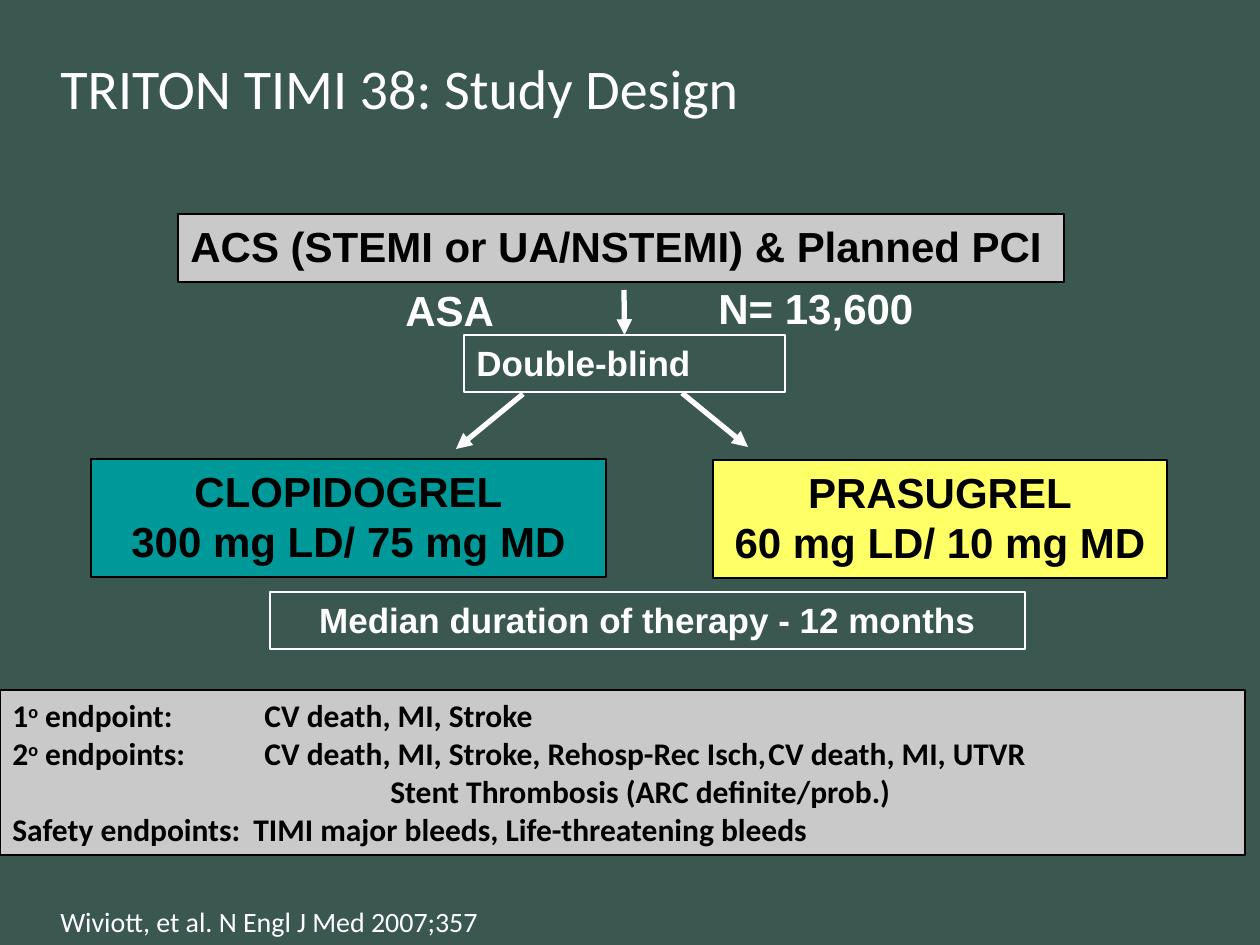
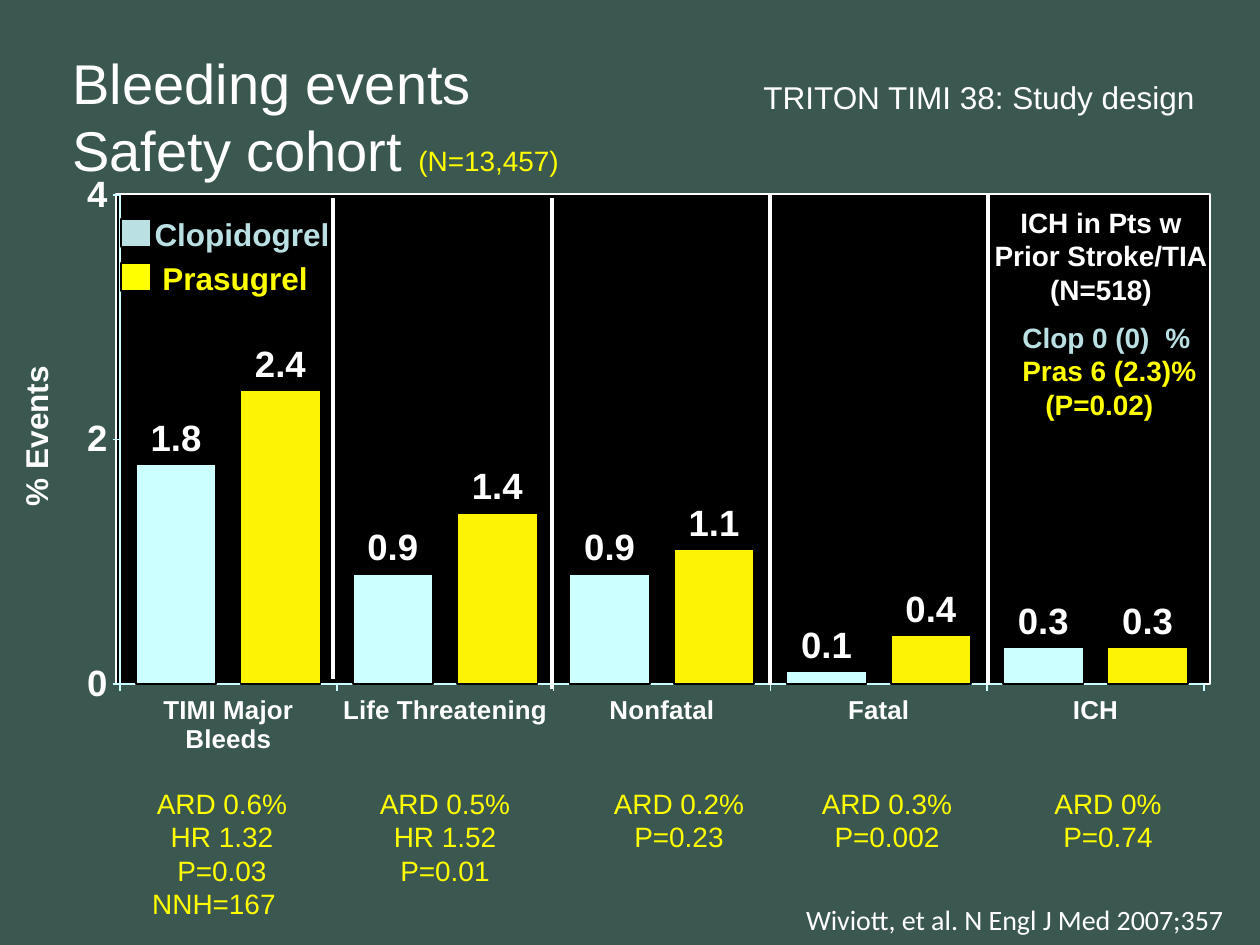
from dataclasses import dataclass

from lxml import etree
from pptx import Presentation
from pptx.chart.data import CategoryChartData
from pptx.dml.color import RGBColor
from pptx.enum import chart as charts
from pptx.enum import shapes, text
from pptx.oxml import parse_xml
from pptx.oxml.ns import nsdecls, qn
from pptx.util import Emu, Pt

EMU_PER_PX = 914400 / 126
PAGE_SIZE = (1260, 945)
COLORS = {
    "slate": "3A5750", "white": "FFFFFF", "black": "000000", "grey": "C9C9C9",
    "lemon": "FFFF66", "teal": "009999", "yellow": "FFFF00", "sky": "BBE0E3",
    "ice": "CCFFFF", "gold": "FCF305",
}
LEFT, CENTER, RIGHT = text.PP_ALIGN.LEFT, text.PP_ALIGN.CENTER, text.PP_ALIGN.RIGHT
CITATION = "Wiviott, et al. N Engl J Med 2007;357"


@dataclass(frozen=True)
class Area:
    left: int
    top: int
    width: int
    height: int


@dataclass(frozen=True)
class Span:
    text: str
    size: float | None = None
    color: str | None = None
    raised: bool = False


@dataclass(frozen=True)
class Line:
    spans: tuple[Span, ...]
    left: int = 0
    right: int = 0
    tabs: tuple[int, ...] = ()


@dataclass(frozen=True)
class Panel:
    area: Area
    lines: tuple
    fill: str | None = None
    size: int = 24
    align: int = CENTER


@dataclass(frozen=True)
class Outcome:
    center: int
    height: int
    lines: tuple


@dataclass(frozen=True)
class Key:
    label: str
    color: str
    swatch_top: int
    label_area: Area


def px(length: float) -> Emu:
    return Emu(round(length * EMU_PER_PX))


def rgb(name: str) -> RGBColor:
    return RGBColor.from_string(COLORS[name])


def place(area: Area) -> tuple:
    return px(area.left), px(area.top), px(area.width), px(area.height)


def style_font(font, size: float, color: str, bold: bool, face: str) -> None:
    font.size, font.bold, font.name = Pt(size), bold, face
    font.color.rgb = rgb(color)


def write(box, lines, *, size=16, color="white", bold=False, face="Arial",
          align=LEFT, anchor=text.MSO_ANCHOR.TOP, wrap=True) -> None:
    frame = box.text_frame
    frame.word_wrap = wrap
    frame.vertical_anchor = anchor
    for index, entry in enumerate(lines):
        line = Line((Span(entry),)) if isinstance(entry, str) else entry
        para = frame.add_paragraph() if index else frame.paragraphs[0]
        para.alignment = align
        settings = para._p.get_or_add_pPr()
        if line.left:
            settings.set("marL", str(px(line.left)))
        if line.right:
            settings.set("marR", str(px(line.right)))
        if line.tabs:
            stops = etree.SubElement(settings, qn("a:tabLst"))
            for stop in line.tabs:
                etree.SubElement(stops, qn("a:tab"), pos=str(px(stop)), algn="l")
        for part in line.spans:
            span = para.add_run()
            span.text = part.text
            style_font(span.font, part.size or size, part.color or color, bold, face)
            if part.raised:
                span._r.get_or_add_rPr().set("baseline", "30000")


def add_text(page, area: Area, *lines, **style):
    box = page.shapes.add_textbox(*place(area))
    write(box, lines, **style)
    return box


def add_rectangle(page, area: Area, fill: str | None, line: str, weight: float):
    box = page.shapes.add_shape(shapes.MSO_SHAPE.RECTANGLE, *place(area))
    box.shadow.inherit = False
    if fill:
        box.fill.solid()
        box.fill.fore_color.rgb = rgb(fill)
    else:
        box.fill.background()
    box.line.color.rgb = rgb(line)
    box.line.width = Pt(weight)
    return box


def add_panel(page, panel: Panel, face: str = "Arial"):
    ink, edge, weight = ("black", "black", 1.5) if panel.fill else ("white", "white", 1)
    box = add_rectangle(page, panel.area, panel.fill, edge, weight)
    write(box, panel.lines, size=panel.size, color=ink, bold=True, face=face,
          align=panel.align)
    return box


def add_line(page, start: tuple, end: tuple, weight: float, arrow: bool = False):
    link = page.shapes.add_connector(
        shapes.MSO_CONNECTOR.STRAIGHT, *map(px, (*start, *end)))
    link.line.color.rgb = rgb("white")
    link.line.width = Pt(weight)
    if arrow:
        etree.SubElement(link.line._get_or_add_ln(), qn("a:tailEnd"), type="triangle")
    etree.SubElement(link._element.spPr, qn("a:effectLst"))
    return link


def add_page(deck):
    page = deck.slides.add_slide(deck.slide_layouts[6])
    page.background.fill.solid()
    page.background.fill.fore_color.rgb = rgb("slate")
    return page


def add_title(page, area: Area, *lines, face: str = "Arial") -> None:
    add_text(page, area, *lines, size=32, face=face, anchor=text.MSO_ANCHOR.MIDDLE)


def add_citation(page, left: int, top: int, align) -> None:
    add_text(page, Area(left, top, 551, 47), CITATION, face="Calibri", align=align)


def build_design(deck) -> None:
    page = add_page(deck)
    add_title(page, Area(48, 38, 1187, 98), "TRITON TIMI 38: Study Design", face="Calibri")
    blinding = add_panel(page, Panel(
        Area(464, 335, 321, 57), ("Double-blind",), size=20, align=LEFT))
    for panel in (
        Panel(Area(178, 214, 886, 68), ("ACS (STEMI or UA/NSTEMI) & Planned PCI",),
              "grey", align=LEFT),
        Panel(Area(713, 460, 454, 118), ("PRASUGREL", "60 mg LD/ 10 mg MD"), "lemon"),
        Panel(Area(91, 459, 515, 118), ("CLOPIDOGREL", "300 mg LD/ 75 mg MD"), "teal"),
        Panel(Area(270, 592, 755, 57), ("Median duration of therapy - 12 months",), size=20),
    ):
        add_panel(page, panel)
    degree = Span("o", raised=True)
    endpoints = (
        Line((Span("1"), degree, Span(" endpoint:\tCV death, MI, Stroke")), tabs=(252,)),
        Line((Span("2"), degree, Span(
            " endpoints:\tCV death, MI, Stroke, Rehosp-Rec Isch,\tCV death, MI, UTVR")),
            tabs=(252, 756)),
        Line((Span("Stent Thrombosis (ARC definite/prob.)"),), left=378),
        Line((Span("Safety endpoints:\tTIMI major bleeds, Life-threatening bleeds"),),
             tabs=(241,)),
    )
    add_panel(page, Panel(Area(0, 690, 1245, 165), endpoints, "grey", 18, LEFT), "Calibri")
    add_text(page, Area(393, 278, 186, 63), "ASA", size=24, bold=True)
    add_text(page, Area(706, 276, 271, 63), "N= 13,600", size=24, bold=True)
    add_line(page, (523, 394), (456, 449), 3, arrow=True)
    add_line(page, (682, 393), (748, 447), 3, arrow=True)
    enrolment = add_line(page, (624, 290), (624, 335), 3, arrow=True)
    enrolment.end_connect(blinding, 0)
    add_citation(page, 48, 898, LEFT)


def style_axis(axis, size: float) -> None:
    style_font(axis.tick_labels.font, size, "white", True, "Arial")
    axis.format.line.color.rgb = rgb("ice")
    axis.format.line.width = Pt(0.9)
    axis.has_major_gridlines = False
    axis.major_tick_mark = charts.XL_TICK_MARK.OUTSIDE
    axis.minor_tick_mark = charts.XL_TICK_MARK.NONE


def set_plot_layout(chart, **fractions: float) -> None:
    plot_area = chart._chartSpace.chart.plotArea
    for old in plot_area.findall(qn("c:layout")):
        plot_area.remove(old)
    values = "".join(f'<c:{key} val="{value}"/>' for key, value in fractions.items())
    plot_area.insert(0, parse_xml(
        f'<c:layout {nsdecls("c")}><c:manualLayout><c:layoutTarget val="inner"/>'
        f'<c:xMode val="edge"/><c:yMode val="edge"/>{values}'
        "</c:manualLayout></c:layout>"))


def add_bleeding_chart(page) -> None:
    data = CategoryChartData(number_format="0.0")
    data.categories = ["TIMI Major Bleeds", "Life Threatening", "Nonfatal", "Fatal", "ICH"]
    data.add_series("Series 1", (1.8, 0.9, 0.9, 0.1, 0.3))
    data.add_series("Series 2", (2.4, 1.4, 1.1, 0.4, 0.3))
    chart = page.shapes.add_chart(
        charts.XL_CHART_TYPE.COLUMN_CLUSTERED, *place(Area(55, 137, 1181, 655)), data).chart
    chart.has_legend = False
    chart.has_title = False
    style_font(chart.font, 18.2, "black", True, "Arial")
    set_plot_layout(chart, x=0.055, y=0.089, w=0.918, h=0.746)
    style_axis(chart.category_axis, 14.8)
    events = chart.value_axis
    style_axis(events, 20.9)
    events.minimum_scale, events.maximum_scale, events.major_unit = 0, 4, 2
    events.tick_labels.number_format = "0"
    events.tick_labels.number_format_is_linked = False
    plot = chart.plots[0]
    plot.gap_width, plot.overlap, plot.vary_by_categories = 40, -30, False
    for series, color in zip(plot.series, ("ice", "gold")):
        series.invert_if_negative = False
        series.format.fill.solid()
        series.format.fill.fore_color.rgb = rgb(color)
        series.format.line.color.rgb = rgb("black")
        series.format.line.width = Pt(0.9)
        labels = series.data_labels
        labels.show_value = True
        labels.number_format = "0.0"
        labels.number_format_is_linked = False
        labels.position = charts.XL_LABEL_POSITION.OUTSIDE_END
        style_font(labels.font, 20.9, "white", True, "Arial")


def build_bleeding(deck) -> None:
    page = add_page(deck)
    add_rectangle(page, Area(116, 194, 1094, 490), "black", "white", 0.75)
    add_bleeding_chart(page)
    add_title(page, Area(60, 37, 586, 157), "Bleeding events",
              Line((Span("Safety cohort "), Span("(N=13,457)", 16, "yellow"))))
    axis_title = add_text(page, Area(-132, 411, 335, 50), "% Events", size=18,
                          bold=True, align=CENTER)
    axis_title.rotation = 270
    for key in (
        Key("Clopidogrel", "sky", 219, Area(118, 209, 248, 50)),
        Key("Prasugrel", "yellow", 263, Area(122, 253, 226, 50)),
    ):
        add_rectangle(page, Area(121, key.swatch_top, 30, 28), key.color, "black", 0.75)
        add_text(page, key.label_area, key.label, size=18, color=key.color,
                 bold=True, align=CENTER)
    for x, bottom, top in ((333, 679, 198), (552, 689, 198), (770, 685, 194), (988, 685, 194)):
        add_line(page, (x, bottom), (x, top), 2.25)
    needed_to_harm = Line((Span("NNH=167"),), right=16)
    for outcome in (
        Outcome(222, 147, ("ARD 0.6%", "HR 1.32", "P=0.03", needed_to_harm)),
        Outcome(445, 147, ("ARD 0.5%", "HR 1.52", "P=0.01")),
        Outcome(679, 113, ("ARD 0.2%", "P=0.23")),
        Outcome(887, 113, ("ARD 0.3%", "P=0.002")),
        Outcome(1108, 113, ("ARD 0%", "P=0.74")),
    ):
        add_text(page, Area(outcome.center - 201, 780, 402, outcome.height),
                 *outcome.lines, color="yellow", align=CENTER)
    add_text(page, Area(900, 199, 402, 113), "ICH in Pts w", "Prior Stroke/TIA",
             "(N=518)", bold=True, align=CENTER)
    add_text(page, Area(1010, 314, 256, 147),
             Line((Span("Clop 0 (0)\t%", color="sky"),), tabs=(143,)),
             "Pras 6 (2.3)%", Line((Span("(P=0.02)"),), left=23),
             color="yellow", bold=True)
    add_citation(page, 685, 896, RIGHT)
    add_text(page, Area(751, 72, 461, 50), "TRITON TIMI 38: Study design", size=18, wrap=False)


def main() -> None:
    deck = Presentation()
    deck.slide_width, deck.slide_height = map(px, PAGE_SIZE)
    build_design(deck)
    build_bleeding(deck)
    deck.save("out.pptx")


if __name__ == "__main__":
    main()
